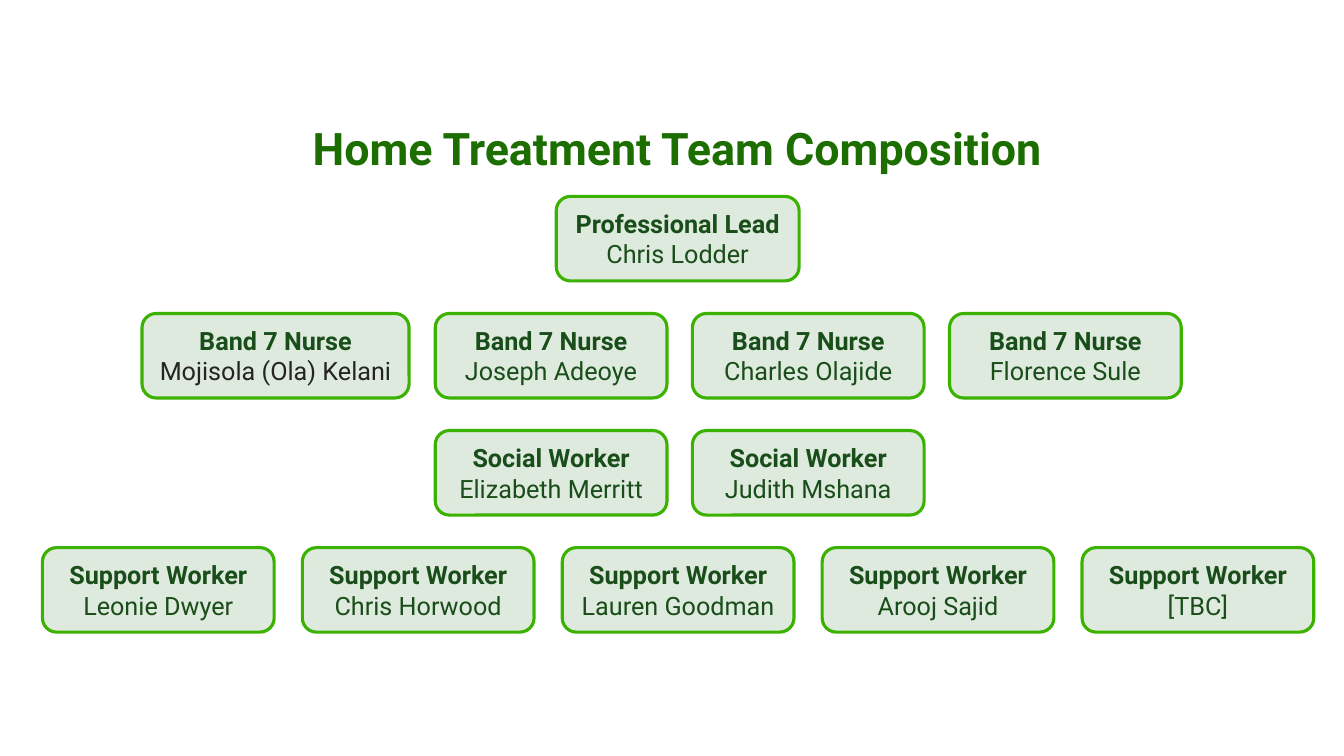
from pptx import Presentation
from pptx.dml.color import RGBColor
from pptx.enum.shapes import MSO_SHAPE
from pptx.enum.text import MSO_ANCHOR, MSO_AUTO_SIZE, PP_ALIGN
from pptx.util import Cm, Pt

ROUNDED = MSO_SHAPE.ROUNDED_RECTANGLE
MIDDLE = MSO_ANCHOR.MIDDLE
CENTER = PP_ALIGN.CENTER
NO_FIT = MSO_AUTO_SIZE.NONE

COLORS = {
    "title": "1C6E00",
    "fill": "DEEADE",
    "border": "3BB200",
    "text": "194D19",
    "dark": "242424",
}


def write(p, text, size=18, color="text", bold=False):
    p.alignment = CENTER
    r = p.add_run()
    r.text = text
    r.font.name = "Roboto"
    r.font.size = Pt(size)
    r.font.bold = bold
    r.font.color.rgb = RGBColor.from_string(COLORS[color])


prs = Presentation()
prs.slide_width, prs.slide_height = Cm(33.87), Cm(19.05)
s = prs.slides.add_slide(prs.slide_layouts[5])

# Title
title = s.shapes.title
title.left, title.top, title.width, title.height = Cm(6.98), Cm(2.9), Cm(20.19), Cm(1.63)
tf = title.text_frame
tf.word_wrap = True
tf.auto_size = NO_FIT
tf.vertical_anchor = MIDDLE
write(tf.paragraphs[0], "Home Treatment Team Composition", size=32, color="title", bold=True)

# Team levels: role, left of first box, box width, step, name colour, names
BOX_W, BOX_H = 5.84, 2.13
NURSE_LEFT, NURSE_STEP = 10.97, 6.48
levels = [
    [("Professional Lead", 14.02, 6.12, 0, "text", ["Chris Lodder"])],
    [("Band 7 Nurse", 3.58, 6.73, 0, "dark", ["Mojisola (Ola) Kelani"]),
     ("Band 7 Nurse", NURSE_LEFT, BOX_W, NURSE_STEP, "text",
      ["Joseph Adeoye", "Charles Olajide", "Florence Sule"])],
    [("Social Worker", NURSE_LEFT, BOX_W, NURSE_STEP, "text",
      ["Elizabeth Merritt", "Judith Mshana"])],
    [("Support Worker", 1.07, BOX_W, 6.55, "text",
      ["Leonie Dwyer", "Chris Horwood", "Lauren Goodman", "Arooj Sajid", "[TBC]"])],
]
FIRST_TOP, LEVEL_STEP = 4.95, 2.95

# Boxes
for level, groups in enumerate(levels):
    top = FIRST_TOP + level * LEVEL_STEP
    for role, left, width, step, color, names in groups:
        for i, name in enumerate(names):
            sp = s.shapes.add_shape(ROUNDED, Cm(left + i * step), Cm(top), Cm(width), Cm(BOX_H))
            sp.shadow.inherit = False
            sp.fill.solid()
            sp.fill.fore_color.rgb = RGBColor.from_string(COLORS["fill"])
            sp.line.color.rgb = RGBColor.from_string(COLORS["border"])
            sp.line.width = Pt(2.25)
            tf = sp.text_frame
            tf.word_wrap = True
            tf.vertical_anchor = MIDDLE
            write(tf.paragraphs[0], role, bold=True)
            write(tf.add_paragraph(), name, color=color)

prs.save("out.pptx")
